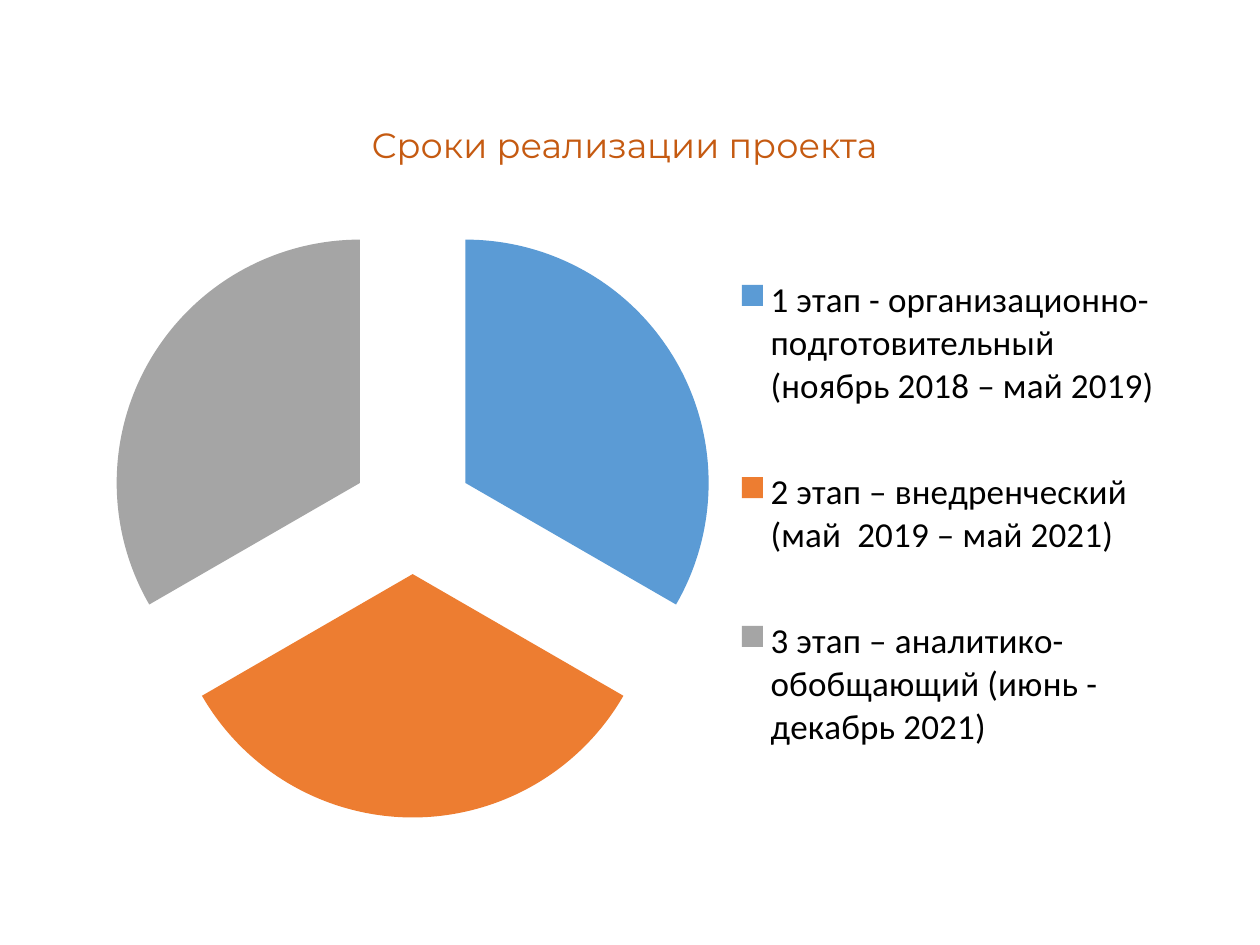
import pptx
import pptx.chart.data
import pptx.dml.color
import pptx.enum.chart
import pptx.enum.text
import pptx.oxml
import pptx.util
from pptx.util import Cm

STAGES = [
    ("1 этап - организационно-подготовительный (ноябрь 2018 – май 2019)", "5B9BD5"),
    ("2 этап – внедренческий (май  2019 – май 2021)", "ED7D31"),
    ("3 этап – аналитико-обобщающий (июнь - декабрь 2021)", "A5A5A5"),
]


def rgb(value):
    return pptx.dml.color.RGBColor.from_string(value)


def layout_xml(x, y, w, h, inner=False):
    """Return a manual chart layout given in fractions of the chart."""
    target = '<c:layoutTarget val="inner"/>' if inner else ""
    return pptx.oxml.parse_xml(
        '<c:layout xmlns:c="http://schemas.openxmlformats.org/drawingml/2006/chart">'
        f'<c:manualLayout>{target}<c:xMode val="edge"/><c:yMode val="edge"/>'
        f'<c:x val="{x}"/><c:y val="{y}"/><c:w val="{w}"/><c:h val="{h}"/>'
        '</c:manualLayout></c:layout>')


def set_layout(element, layout, before):
    """Replace the layout of a chart part, placing it ahead of the given child."""
    for old in element.findall(layout.tag):
        element.remove(old)
    before.addprevious(layout)


class Deck:
    def __init__(self):
        self.prs = pptx.Presentation()
        self.prs.slide_width, self.prs.slide_height = Cm(25.4), Cm(19.05)
        self.s = self.prs.slides.add_slide(self.prs.slide_layouts[6])
        self.title_font, self.body_font = "Montserrat", "Calibri"
        self.size = pptx.util.Pt(20)

    def title(self, text, color, x, y, w, h):
        tf = self.s.shapes.add_textbox(Cm(x), Cm(y), Cm(w), Cm(h)).text_frame
        tf.word_wrap = False
        tf.auto_size = pptx.enum.text.MSO_AUTO_SIZE.SHAPE_TO_FIT_TEXT
        r = tf.paragraphs[0].add_run()
        r.text = text
        r.font.name, r.font.size = self.title_font, self.size
        r.font.color.rgb = rgb(color)

    def pie(self, stages, value, explosion, x, y, w, h):
        data = pptx.chart.data.CategoryChartData()
        data.categories = [name for name, _ in stages]
        data.add_series("Series 1", [value] * len(stages))
        chart = self.s.shapes.add_chart(
            pptx.enum.chart.XL_CHART_TYPE.PIE, Cm(x), Cm(y), Cm(w), Cm(h), data).chart
        chart.has_title = False
        chart.font.name, chart.font.size = self.body_font, pptx.util.Pt(10)
        chart.font.color.rgb = rgb("000000")

        plot = chart.plots[0]
        plot.vary_by_categories = True
        series = plot.series[0]
        for i, (_, color) in enumerate(stages):
            fill = series.points[i].format.fill
            fill.solid()
            fill.fore_color.rgb = rgb(color)
        series_xml = series._element
        explode = pptx.oxml.parse_xml(
            '<c:explosion xmlns:c="http://schemas.openxmlformats.org/drawingml/2006/chart"'
            f' val="{explosion}"/>')
        series_xml.find(pptx.oxml.ns.qn("c:dPt")).addprevious(explode)

        chart.has_legend = True
        legend = chart.legend
        legend.position = pptx.enum.chart.XL_LEGEND_POSITION.RIGHT
        legend.include_in_layout = False
        legend.font.name, legend.font.size = self.body_font, self.size
        legend.font.color.rgb = rgb("000000")
        legend_xml = legend._element
        set_layout(legend_xml, layout_xml(0.6, 0.06, 0.39, 0.88),
                   legend_xml.find(pptx.oxml.ns.qn("c:overlay")))
        plot_xml = plot._element
        set_layout(plot_xml.getparent(), layout_xml(0.02, 0.05, 0.56, 0.9, inner=True),
                   plot_xml)


def main():
    deck = Deck()
    deck.pie(STAGES, 33, 25, 1.75, 3.53, 21.9, 13.64)
    deck.title("Сроки реализации проекта", "C55A11", 7.24, 2.36, 11.56, 1.12)
    deck.prs.save("out.pptx")


if __name__ == "__main__":
    main()
